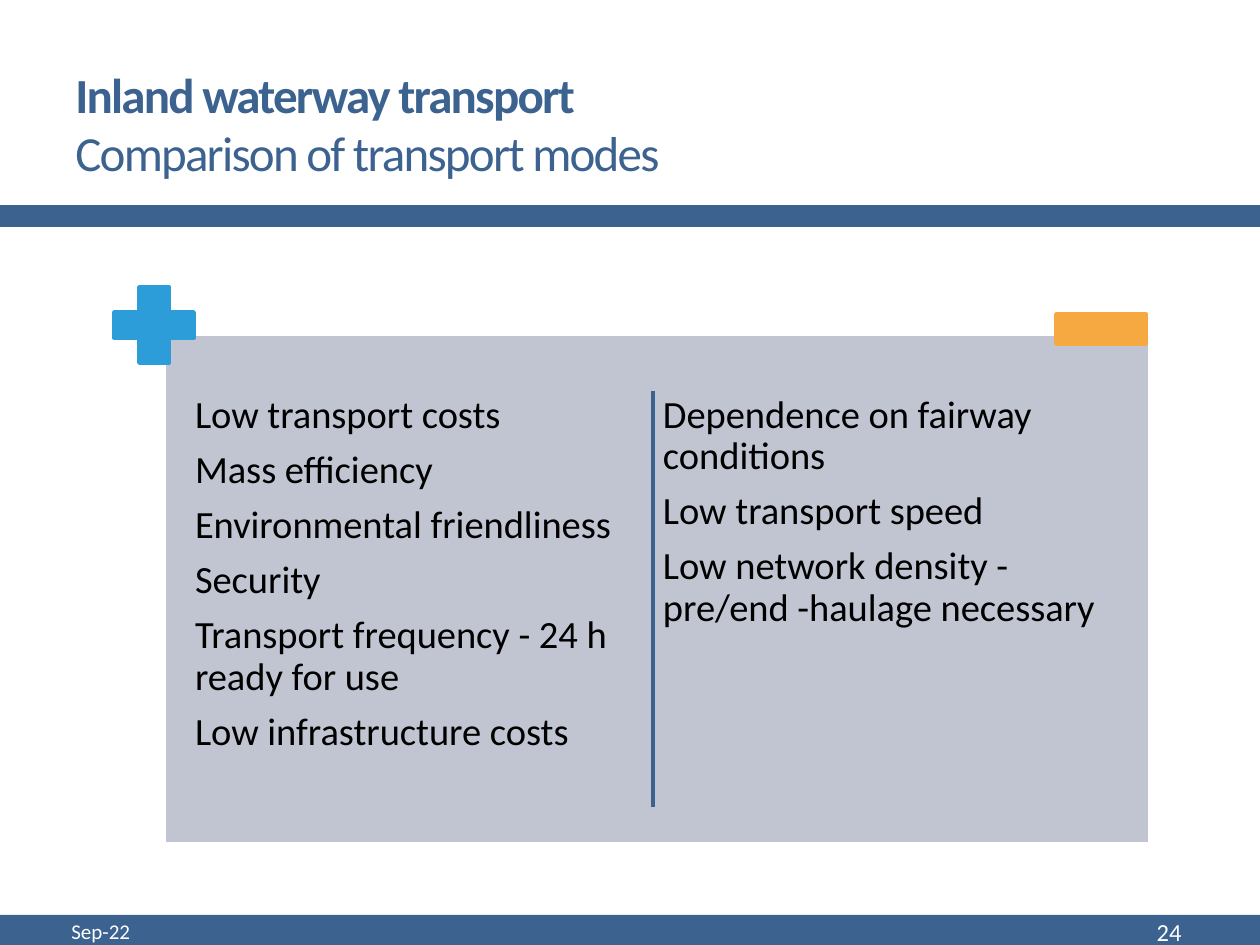
import pptx
import pptx.dml.color
import pptx.enum.shapes
import pptx.enum.text
import pptx.oxml
import pptx.oxml.ns
import pptx.util

RGBColor = pptx.dml.color.RGBColor
SHAPE = pptx.enum.shapes.MSO_SHAPE
ALIGN = pptx.enum.text.PP_ALIGN
ANCHOR = pptx.enum.text.MSO_ANCHOR

NAVY = RGBColor(0x3C, 0x62, 0x8F)
PANEL_GREY = RGBColor(0xC0, 0xC5, 0xD1)
PLUS_BLUE = RGBColor(0x2D, 0x9D, 0xD9)
MINUS_ORANGE = RGBColor(0xF7, 0xA9, 0x41)
WHITE = RGBColor(0xFF, 0xFF, 0xFF)
BLACK = RGBColor(0, 0, 0)

FONT = "Calibri"
EMU_PER_PX = 914400 / 126
OUTLINE = pptx.util.Pt(2.08)

ADVANTAGES = [
    "Low transport costs",
    "Mass efficiency",
    "Environmental friendliness",
    "Security",
    "Transport frequency - 24 h ready for use",
    "Low infrastructure costs",
]
DRAWBACKS = [
    "Dependence on fairway conditions",
    "Low transport speed",
    "Low network density - pre/end -haulage necessary",
]


def px(*lengths):
    return [pptx.util.Emu(round(length * EMU_PER_PX)) for length in lengths]


def add_block(slide, kind, box, fill, outline=None):
    block = slide.shapes.add_shape(kind, *px(*box))
    block.shadow.inherit = False
    block.fill.solid()
    block.fill.fore_color.rgb = fill
    if outline is None:
        block.line.fill.background()
    else:
        block.line.color.rgb = outline
        block.line.width = OUTLINE
    return block


def add_text(slide, box, lines, size, color, anchor=ANCHOR.MIDDLE,
             align=ALIGN.LEFT):
    frame = slide.shapes.add_textbox(*px(*box)).text_frame
    frame.word_wrap = True
    frame.vertical_anchor = anchor
    frame.text = "\n".join(lines)
    for paragraph in frame.paragraphs:
        paragraph.alignment = align
        for run in paragraph.runs:
            run.font.name = FONT
            run.font.size = pptx.util.Pt(size)
            run.font.color.rgb = color
    return frame


def add_title(slide, heading, subheading):
    frame = add_text(slide, (63, 55, 1134, 136), [f"{heading}\v{subheading}"],
                     28, NAVY)
    runs = frame.paragraphs[0].runs
    runs[0].font.bold = True
    for run in runs:
        run.font._element.set("spc", "-100")


def add_points(slide, left, points):
    frame = add_text(slide, (left, 389, 459, 436), points, 22, BLACK,
                     ANCHOR.TOP)
    frame.margin_left, frame.margin_right = px(6, 6)
    frame.margin_top, frame.margin_bottom = px(6, 6)
    for paragraph in frame.paragraphs:
        paragraph.line_spacing = 0.9
        paragraph.space_after = pptx.util.Pt(7.7)


def add_divider(slide, x, top, bottom):
    divider = slide.shapes.add_connector(
        pptx.enum.shapes.MSO_CONNECTOR.STRAIGHT, *px(x, top, x, bottom))
    divider.line.color.rgb = NAVY
    divider.line.width = OUTLINE
    divider._element.spPr.append(
        pptx.oxml.parse_xml(f"<a:effectLst {pptx.oxml.ns.nsdecls('a')}/>"))


def main():
    deck = pptx.Presentation()
    deck.slide_width, deck.slide_height = px(1260, 945)
    slide = deck.slides.add_slide(deck.slide_layouts[6])

    # Header and footer bars
    add_block(slide, SHAPE.RECTANGLE, (0, 915, 1260, 30), NAVY)
    add_block(slide, SHAPE.RECTANGLE, (0, 205, 1260, 22), NAVY)
    add_title(slide, "Inland waterway transport",
              "Comparison of transport modes")

    # Comparison panel
    add_block(slide, SHAPE.RECTANGLE, (164, 334, 986, 510), PANEL_GREY, WHITE)
    add_points(slide, 189, ADVANTAGES)
    add_points(slide, 657, DRAWBACKS)

    # Plus and minus signs
    plus = add_block(slide, SHAPE.CROSS, (114, 287, 80, 76), PLUS_BLUE,
                     PLUS_BLUE)
    plus.adjustments[0] = 0.33
    add_block(slide, SHAPE.RECTANGLE, (1056, 314, 90, 30), MINUS_ORANGE,
              MINUS_ORANGE)
    add_divider(slide, 653, 391, 807)

    # Date and slide number
    add_text(slide, (59, 909, 400, 45), ["Sep-22"], 12, WHITE)
    add_text(slide, (1047, 909, 147, 45), ["24"], 14, WHITE,
             align=ALIGN.RIGHT)

    deck.save("out.pptx")


if __name__ == "__main__":
    main()
